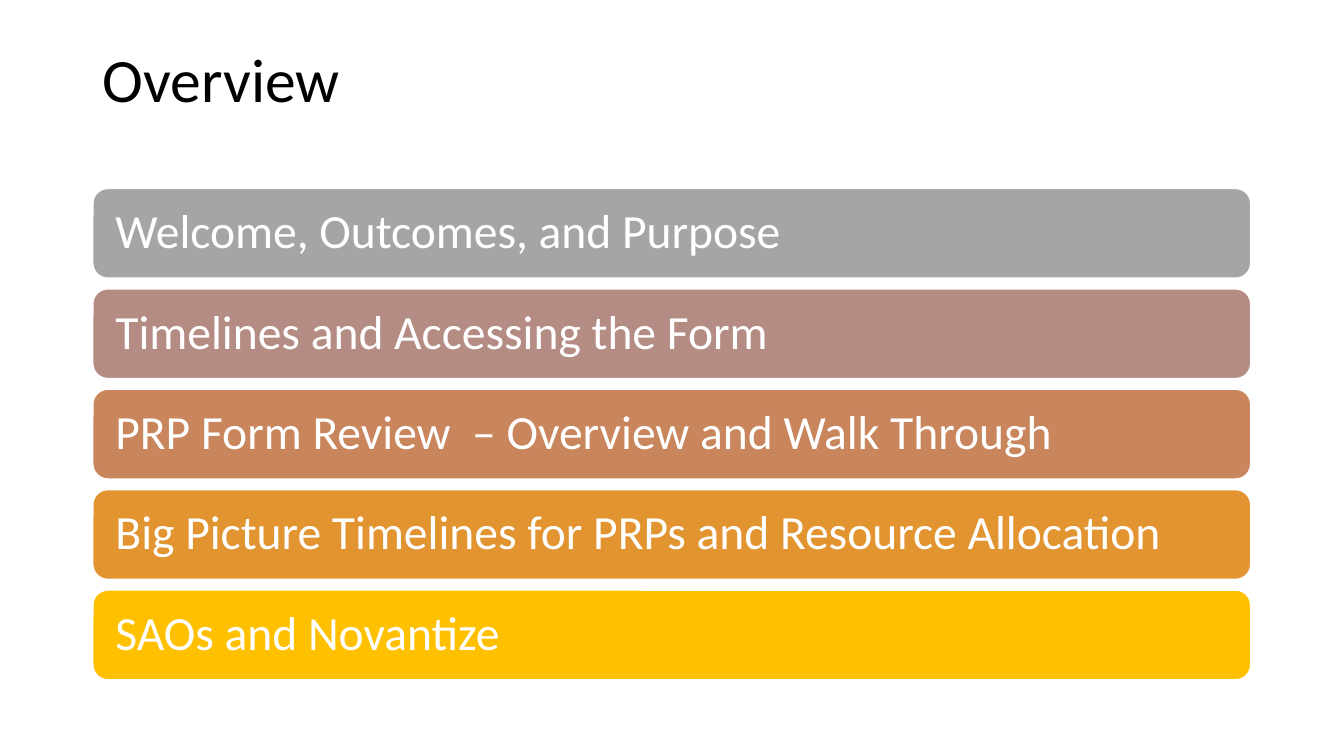
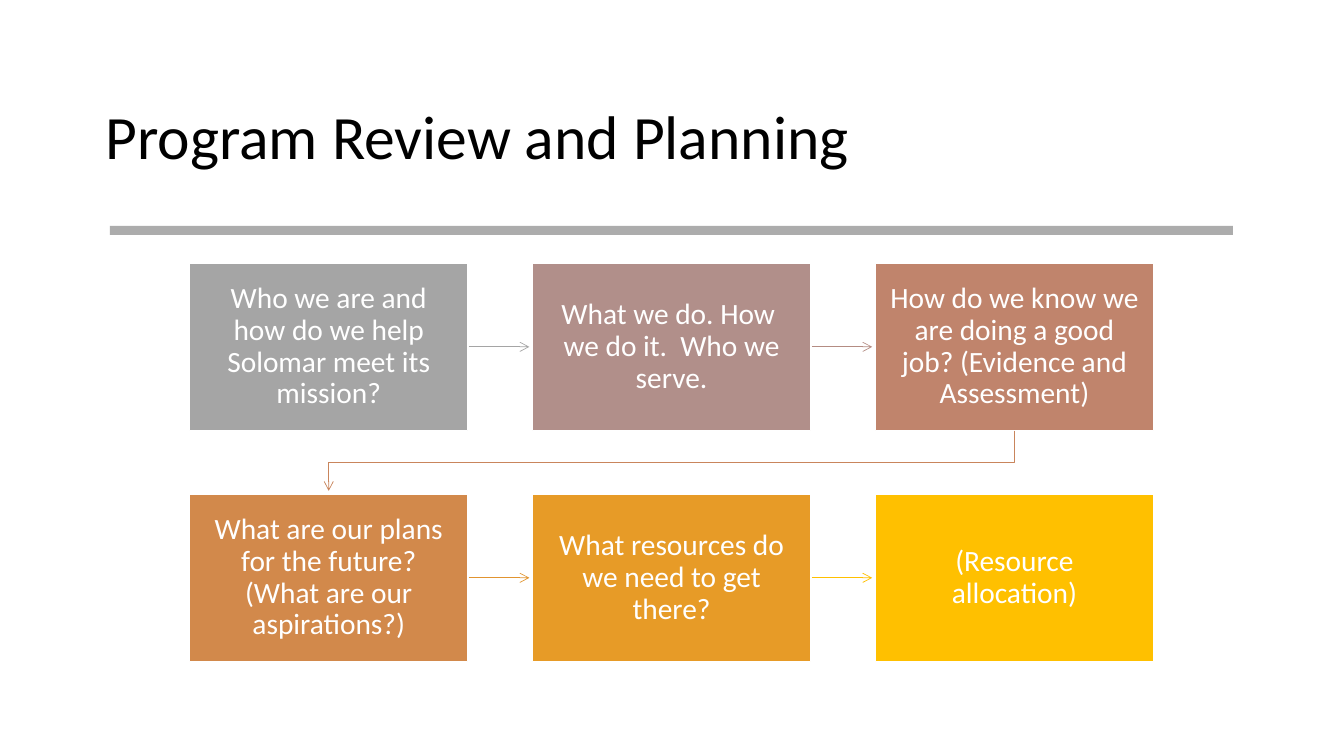
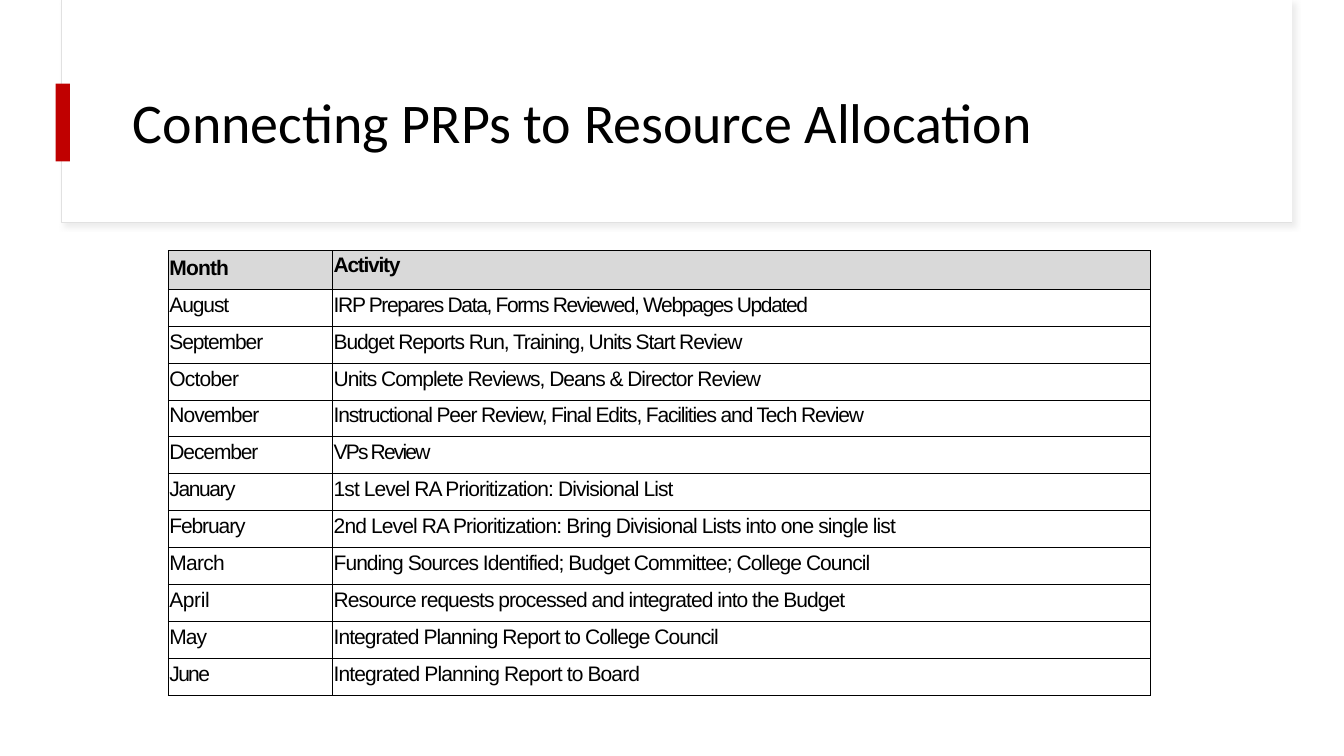
import lxml.etree
import pptx
import pptx.dml.color
import pptx.enum.shapes
import pptx.enum.text
import pptx.oxml.ns
import pptx.util

Cm = pptx.util.Cm
Pt = pptx.util.Pt
SHAPES = pptx.enum.shapes.MSO_SHAPE
ALIGN = pptx.enum.text.PP_ALIGN
ANCHOR = pptx.enum.text.MSO_ANCHOR

COLORS = {
    "black": "000000",
    "white": "FFFFFF",
    "rule": "808080",
    "accent": "C00000",
    "frame": "E1E1E1",
    "shadow": "D9D9D9",
    "header": "D9D9D9",
    "step1": "A5A5A5",
    "step2": "B48C83",
    "step3": "C9855C",
    "step4": "E19430",
    "step5": "FFC000",
    "box1": "A5A5A5",
    "box2": "B18F8A",
    "box3": "C0846C",
    "box4": "D2894B",
    "box5": "E79B27",
    "box6": "FFC000",
}


def rgb(name):
    return pptx.dml.color.RGBColor.from_string(COLORS[name])


def add_xml(parent, tag, **attributes):
    return lxml.etree.SubElement(parent, pptx.oxml.ns.qn(tag), attributes)


class Deck:
    title_font = {"name": "Calibri", "size": Pt(44)}
    body_font = {"name": "Calibri"}
    table_font = {"name": "Arial", "size": Pt(15)}
    body_inset = 0.36

    def __init__(self):
        self.presentation = pptx.Presentation()
        self.presentation.slide_width = Cm(33.87)
        self.presentation.slide_height = Cm(19.05)
        self.slide = None

    def new_slide(self):
        self.slide = self.presentation.slides.add_slide(self.presentation.slide_layouts[6])

    def add_text(self, frame, text, color, font, paragraph_format):
        paragraph = frame.paragraphs[0]
        run = paragraph.add_run()
        run.text = text
        run.font.color.rgb = rgb(color)
        for target, values in ((run.font, font), (paragraph, paragraph_format)):
            for name, value in values.items():
                setattr(target, name, value)
        return run

    def title(self, text, left, top, width, height, size=44):
        frame = self.slide.shapes.add_textbox(Cm(left), Cm(top), Cm(width), Cm(height)).text_frame
        frame.word_wrap = True
        frame.vertical_anchor = ANCHOR.MIDDLE
        font = {**self.title_font, "size": Pt(size)}
        self.add_text(frame, text, "black", font, {"line_spacing": 0.9})

    def block(self, kind, left, top, width, height, fill, line=None, line_width=1):
        shape = self.slide.shapes.add_shape(kind, Cm(left), Cm(top), Cm(width), Cm(height))
        shape.shadow.inherit = False
        shape.fill.solid()
        shape.fill.fore_color.rgb = rgb(fill)
        if line:
            shape.line.color.rgb = rgb(line)
            shape.line.width = Pt(line_width)
        else:
            shape.line.fill.background()
        return shape

    def label(self, shape, text, size, alignment, side_inset):
        frame = shape.text_frame
        values = {
            "word_wrap": True,
            "vertical_anchor": ANCHOR.MIDDLE,
            "margin_left": Cm(side_inset),
            "margin_right": Cm(side_inset),
            "margin_top": Cm(self.body_inset),
            "margin_bottom": Cm(self.body_inset),
        }
        for name, value in values.items():
            setattr(frame, name, value)
        font = {**self.body_font, "size": Pt(size)}
        self.add_text(frame, text, "white", font, {"alignment": alignment, "line_spacing": 0.9})

    def make_transparent(self, shape, opacity):
        color = shape.element.spPr.find(".//" + pptx.oxml.ns.qn("a:srgbClr"))
        add_xml(color, "a:alpha", val=str(opacity * 1000))

    def cast_shadow(self, shape):
        effects = shape.element.spPr.find(pptx.oxml.ns.qn("a:effectLst"))
        shadow = add_xml(effects, "a:outerShdw", blurRad=str(Pt(4)), dist=str(Pt(3)),
                         dir="2700000", algn="tl", rotWithShape="0")
        color = add_xml(shadow, "a:srgbClr", val=COLORS["shadow"])
        add_xml(color, "a:alpha", val="50000")

    def style_arrow(self, shape, color):
        shape.line.color.rgb = rgb(color)
        shape.line.width = Pt(0.5)
        outline = shape.element.spPr.find(pptx.oxml.ns.qn("a:ln"))
        add_xml(outline, "a:tailEnd", type="arrow")

    def arrow(self, start, end, color):
        kind = pptx.enum.shapes.MSO_CONNECTOR.STRAIGHT
        points = [Cm(value) for value in (*start, *end)]
        connector = self.slide.shapes.add_connector(kind, *points)
        self.style_arrow(connector, color)
        add_xml(connector.element.spPr, "a:effectLst")

    def bent_arrow(self, points, color):
        start, *others = [(Cm(x), Cm(y)) for x, y in points]
        builder = self.slide.shapes.build_freeform(*start)
        builder.add_line_segments(others, close=False)
        shape = builder.convert_to_shape()
        shape.shadow.inherit = False
        shape.fill.background()
        self.style_arrow(shape, color)

    def border(self, cell):
        properties = cell._tc.get_or_add_tcPr()
        for side in ("a:lnL", "a:lnR", "a:lnT", "a:lnB"):
            line = add_xml(properties, side, w=str(Pt(0.75)))
            add_xml(add_xml(line, "a:solidFill"), "a:srgbClr", val=COLORS["black"])

    def cell(self, cell, text, spacing, top=0.1, before=3, header=False):
        margins = {"margin_left": Cm(0.03), "margin_right": 0, "margin_top": Cm(top), "margin_bottom": 0}
        for name, value in margins.items():
            setattr(cell, name, value)
        self.border(cell)
        if header:
            cell.fill.solid()
            cell.fill.fore_color.rgb = rgb("header")
        else:
            cell.fill.background()
        font = {**self.table_font, "bold": header}
        run = self.add_text(cell.text_frame, text, "black", font, {"space_before": Pt(before)})
        run._r.get_or_add_rPr().set("spc", str(round(spacing * 100)))

    def table(self, left, top, widths, header_height, row_height, header, rows):
        height = header_height + row_height * len(rows)
        table = self.slide.shapes.add_table(
            len(rows) + 1, len(widths), Cm(left), Cm(top), Cm(sum(widths)), Cm(height)).table
        table.first_row = False
        table.horz_banding = False
        for column, width in zip(table.columns, widths):
            column.width = Cm(width)
        for index, row in enumerate(table.rows):
            row.height = Cm(row_height if index else header_height)
        for column, values in enumerate(header):
            self.cell(table.cell(0, column), *values, header=True)
        for index, row in enumerate(rows, 1):
            for column, values in enumerate(row):
                self.cell(table.cell(index, column), *values)


def add_overview(deck):
    topics = [
        "Welcome, Outcomes, and Purpose",
        "Timelines and Accessing the Form",
        "PRP Form Review  – Overview and Walk Through",
        "Big Picture Timelines for PRPs and Resource Allocation",
        "SAOs and Novantize",
    ]
    deck.new_slide()
    deck.title("Overview", 2.34, 0.69, 29.18, 2.79)
    for index, topic in enumerate(topics):
        bar = deck.block(SHAPES.ROUNDED_RECTANGLE, 2.34, 4.75 + 2.53 * index, 29.18, 2.26,
                         f"step{index + 1}", "white")
        deck.label(bar, topic, 34, ALIGN.LEFT, 0.46)


def add_planning(deck):
    questions = [
        "Who we are and how do we help Solomar meet its mission?",
        "What we do. How  we do it.  Who we serve.",
        "How do we know we are doing a good job? (Evidence and Assessment)",
        "What are our plans for the future? (What are our aspirations?)",
        "What resources do we need to get there?",
        "(Resource allocation)",
    ]
    left, top, width, height = 4.78, 6.63, 7.01, 4.22
    column_step, row_step, columns = 8.64, 5.82, 3
    deck.new_slide()
    deck.title("Program Review and Planning", 2.41, 1.68, 29.03, 3.68)
    rule = deck.block(SHAPES.RECTANGLE, 2.77, 5.69, 28.3, 0.23, "rule")
    deck.make_transparent(rule, 65)
    arrow_colors = iter(["step1", "step2", "step3", "step4", "step5"])
    for index, question in enumerate(questions):
        row, column = divmod(index, columns)
        x, y = left + column * column_step, top + row * row_step
        box = deck.block(SHAPES.RECTANGLE, x, y, width, height, f"box{index + 1}", "white")
        deck.label(box, question, 21, ALIGN.CENTER, deck.body_inset)
        if column < columns - 1:
            middle = y + height / 2
            deck.arrow((x + width + 0.03, middle), (x + column_step - 0.08, middle), next(arrow_colors))
        elif row == 0:
            start_x, end_x = x + width / 2, left + width / 2
            turn = y + (height + row_step) / 2
            deck.bent_arrow([(start_x, y + height), (start_x, turn), (end_x, turn),
                             (end_x, y + row_step - 0.08)], next(arrow_colors))


def add_calendar(deck):
    header = [("Month", -0.6, 0.15, 4), ("Activity", -0.9, 0.08, 1.9)]
    rows = [
        (("August", -0.8), ("IRP Prepares Data, Forms Reviewed, Webpages Updated", -0.97)),
        (("September", -0.8), ("Budget Reports Run, Training, Units Start Review", -0.78)),
        (("October", -0.6), ("Units Complete Reviews, Deans & Director Review", -0.73)),
        (("November", -0.7), ("Instructional Peer Review, Final Edits, Facilities and Tech Review", -0.81)),
        (("December", -0.8), ("VPs Review", -1.3)),
        (("January", -1), ("1st Level RA Prioritization: Divisional List", -0.66)),
        (("February", -0.8), ("2nd Level RA Prioritization: Bring Divisional Lists into one single list", -0.62)),
        (("March", -0.5), ("Funding Sources Identified; Budget Committee; College Council", -0.68)),
        (("April", -0.3), ("Resource requests processed and integrated into the Budget", -0.67)),
        (("May", -0.7), ("Integrated Planning Report to College Council", -0.67)),
        (("June", -1.2), ("Integrated Planning Report to Board", -0.61)),
    ]
    deck.new_slide()
    frame = deck.block(SHAPES.RECTANGLE, 1.55, 0, 31.01, 5.61, "white", "frame", 0.75)
    deck.cast_shadow(frame)
    deck.block(SHAPES.RECTANGLE, 1.57, 0, 30.99, 5.59, "white")
    deck.title("Connecting PRPs to Resource Allocation", 3.1, 1.52, 28.24, 3.28, 40)
    deck.block(SHAPES.RECTANGLE, 1.4, 2.11, 0.36, 1.96, "accent")
    deck.table(4.24, 6.32, (4.14, 20.62), 0.97, 0.93, header, rows)


def main():
    deck = Deck()
    add_overview(deck)
    add_planning(deck)
    add_calendar(deck)
    deck.presentation.save("out.pptx")


if __name__ == "__main__":
    main()
